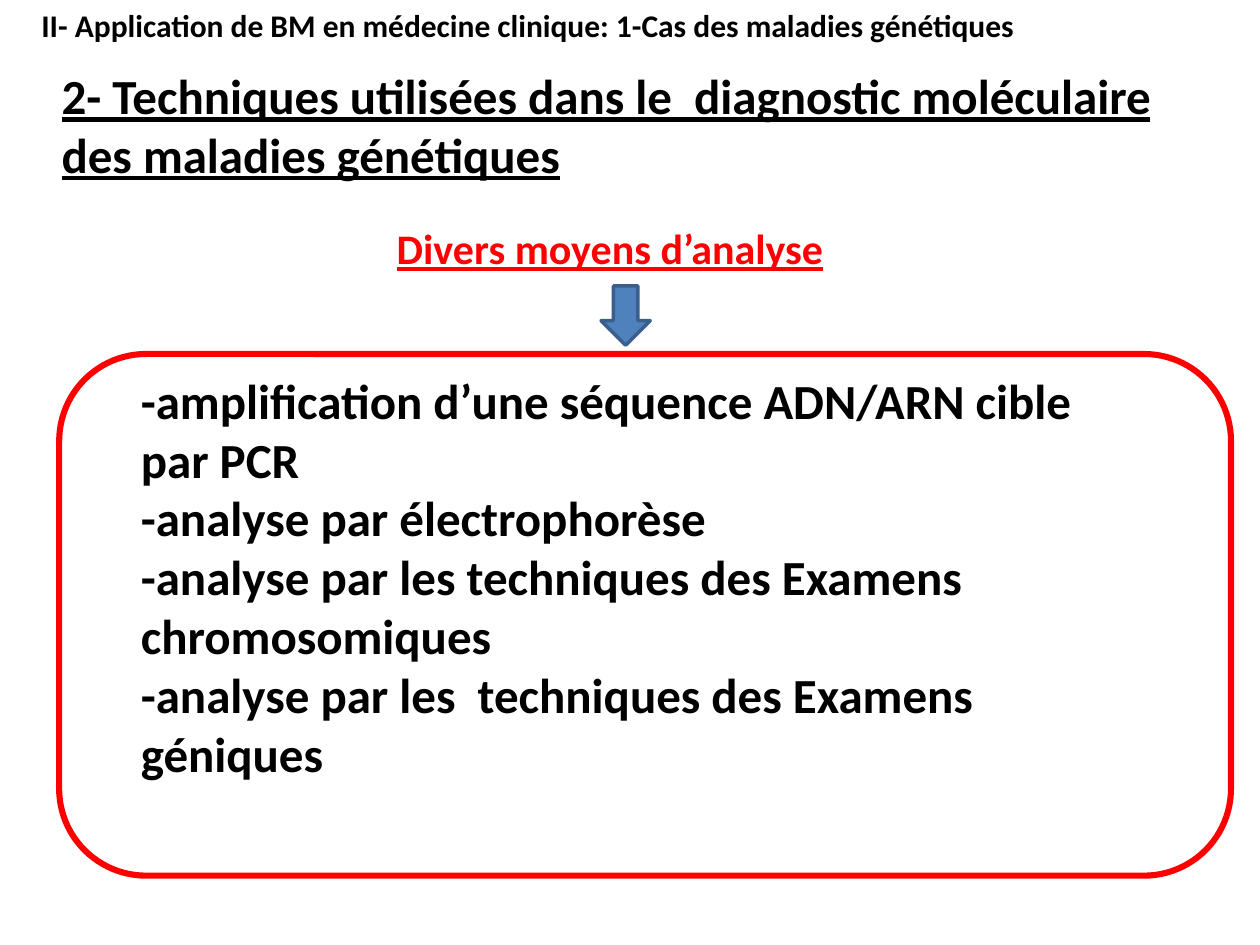
"""Build the slide on techniques for the molecular diagnosis of genetic diseases."""
from dataclasses import dataclass

from pptx import Presentation
from pptx import util as u
from pptx.dml import color
from pptx.enum import shapes, text

COLUMNS, ROWS = 100, 75


@dataclass(frozen=True)
class Theme:
    """Colours, font and type sizes of the deck."""
    font: str = "Calibri"
    ink: str = "000000"
    accent: str = "FF0000"
    arrow: str = "4F81BD"
    arrow_edge: str = "3A5F8C"
    small: int = 18
    medium: int = 24
    large: int = 28


def write(para, wording, *, font, size, ink, underline=False):
    """Add a bold span of text to a paragraph."""
    span = para.add_run()
    span.text = wording
    span.font.name, span.font.size = font, u.Pt(size)
    span.font.bold, span.font.underline = True, underline
    span.font.color.rgb = color.RGBColor.from_string(ink)


class Page:
    """A slide with its style, measured in grid columns and rows."""

    def __init__(self, deck, theme):
        """Add a blank slide to the deck."""
        self.theme = theme
        self.slide = deck.slides.add_slide(deck.slide_layouts[6])
        self.column = deck.slide_width / COLUMNS
        self.row = deck.slide_height / ROWS

    def place(self, left, top, width, height):
        """Turn grid units into slide lengths."""
        return (round(left * self.column), round(top * self.row),
                round(width * self.column), round(height * self.row))

    def text(self, area, lines, size, ink=None, underline=False):
        """Add a wrapped text box with one paragraph per line."""
        frame = self.slide.shapes.add_textbox(*self.place(*area)).text_frame
        frame.word_wrap = True
        frame.auto_size = text.MSO_AUTO_SIZE.SHAPE_TO_FIT_TEXT
        for index, line in enumerate(lines):
            para = frame.add_paragraph() if index else frame.paragraphs[0]
            write(para, line, font=self.theme.font, size=size,
                  ink=ink or self.theme.ink, underline=underline)

    def shape(self, kind, area, edge, weight, fill=None):
        """Add an outlined preset shape, filled when a colour is given."""
        box = self.slide.shapes.add_shape(kind, *self.place(*area))
        box.shadow.inherit = False
        box.line.color.rgb = color.RGBColor.from_string(edge)
        box.line.width = u.Pt(weight)
        if fill:
            box.fill.solid()
            box.fill.fore_color.rgb = color.RGBColor.from_string(fill)
        else:
            box.fill.background()


def main():
    """Build and save the deck."""
    deck = Presentation()
    deck.slide_width, deck.slide_height = u.Inches(10), u.Inches(7.5)
    theme = Theme()
    page = Page(deck, theme)
    kinds = shapes.MSO_SHAPE

    page.text((2.3, 0, 81.3, 10.1),
              ["II- Application de BM en médecine clinique: 1-Cas des maladies génétiques"],
              theme.small)
    page.text((3.9, 4.7, 89.8, 10.4),
              ["2- Techniques utilisées dans le  diagnostic moléculaire des maladies génétiques"],
              theme.large, underline=True)
    page.text((10.2, 28.9, 79.7, 37),
              ["-amplification d’une séquence ADN/ARN cible par PCR",
               "-analyse par électrophorèse",
               "-analyse par les techniques des Examens chromosomiques",
               "-analyse par les  techniques des Examens géniques"],
              theme.large)
    page.shape(kinds.ROUNDED_RECTANGLE, (4.7, 28.1, 93, 41.4), theme.accent, 3.5)
    page.text((30.5, 17.2, 46.1, 5), ["Divers moyens d’analyse"],
              theme.medium, theme.accent, underline=True)
    page.shape(kinds.DOWN_ARROW, (47.7, 22.7, 3.9, 4.7),
               theme.arrow_edge, 2, theme.arrow)

    deck.save("out.pptx")


if __name__ == "__main__":
    main()
